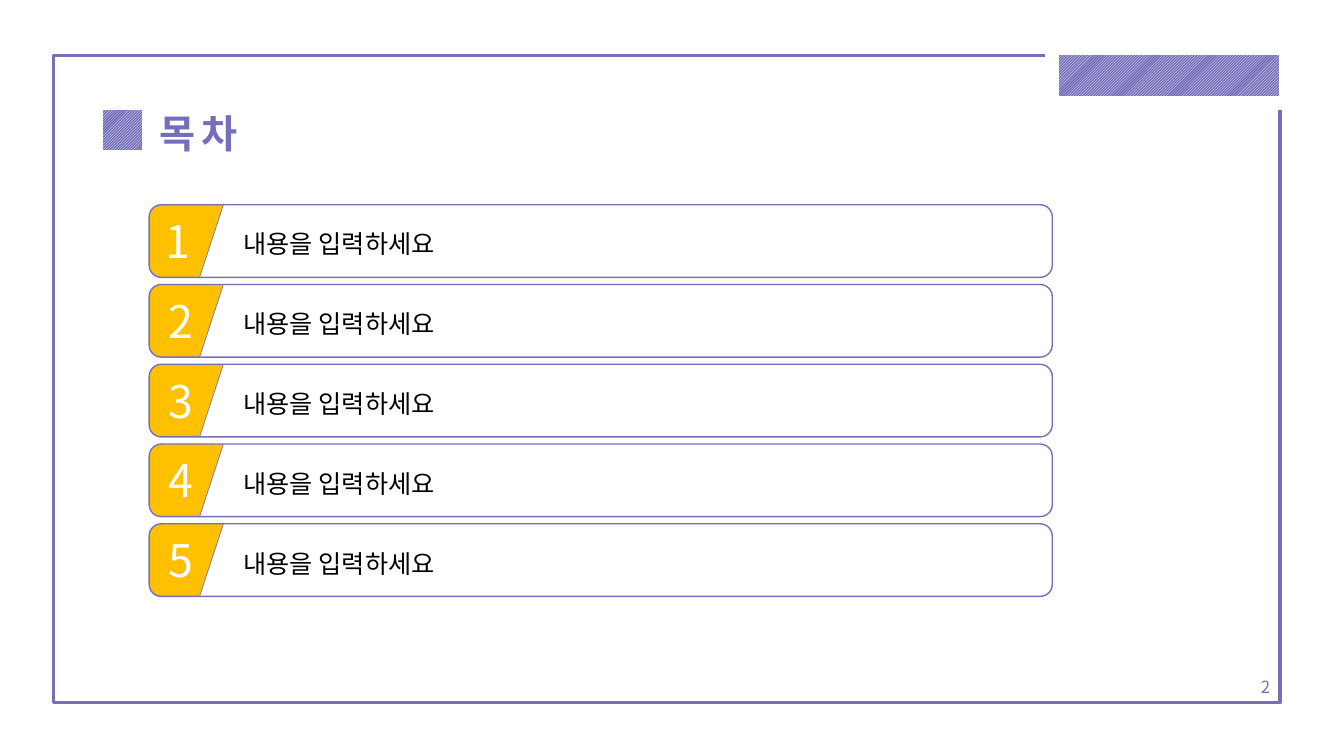
from math import cos, radians, sin

from lxml.etree import SubElement
from pptx import Presentation
from pptx.dml.color import RGBColor
from pptx.enum.dml import MSO_PATTERN
from pptx.enum.shapes import MSO_CONNECTOR, MSO_SHAPE
from pptx.enum.text import MSO_ANCHOR, MSO_AUTO_SIZE as AutoSize, PP_ALIGN
from pptx.oxml.ns import qn
from pptx.util import Cm, Pt

PURPLE = RGBColor(0x75, 0x6F, 0xBB)
AMBER = RGBColor(0xFF, 0xC0, 0x00)
WHITE = RGBColor(0xFF, 0xFF, 0xFF)
BLACK = RGBColor(0x00, 0x00, 0x00)
FONT = "Noto Sans CJK KR"

ENTRIES = ["내용을 입력하세요"] * 5
ROW_LEFT, ROW_TOP, ROW_PITCH = 3.76, 5.16, 2.01
ROW_WIDTH, ROW_HEIGHT = 22.76, 1.83
CORNER = ROW_HEIGHT / 6
TAB_TOP_WIDTH, TAB_BOTTOM_WIDTH = 1.87, 1.27


def add_outline(page, kind, left, top, width, height, weight):
    """Add an unfilled shape with a purple line."""
    shape = page.shapes.add_shape(kind, Cm(left), Cm(top), Cm(width), Cm(height))
    shape.shadow.inherit = False
    shape.fill.background()
    shape.line.color.rgb = PURPLE
    shape.line.width = Pt(weight)
    return shape


def add_hatched_block(page, left, top, width, height):
    """Add a diagonally hatched rectangle with a wide white border."""
    block = add_outline(page, MSO_SHAPE.RECTANGLE, left, top, width, height, 10)
    block.line.color.rgb = WHITE
    block.fill.patterned()
    block.fill.pattern = MSO_PATTERN.DARK_UPWARD_DIAGONAL
    block.fill.fore_color.rgb = WHITE
    block.fill.back_color.rgb = PURPLE


def add_text(page, text, left, top, width, height, size, color,
             wrap=True, bold=False, spacing=None):
    """Add a one-paragraph text box and return it."""
    box = page.shapes.add_textbox(Cm(left), Cm(top), Cm(width), Cm(height))
    frame = box.text_frame
    frame.word_wrap = wrap
    frame.auto_size = AutoSize.SHAPE_TO_FIT_TEXT
    para = frame.paragraphs[0]
    para.text = text
    para.font.size = Pt(size)
    para.font.bold = bold
    para.font.color.rgb = color
    para.font.name = FONT
    defaults = para._p.pPr.find(qn("a:defRPr"))
    SubElement(defaults, qn("a:ea"), typeface=FONT)
    if spacing is not None:
        defaults.set("spc", str(spacing * 100))
    return box


def corner_points(center_x, center_y, start):
    """Return points along a quarter circle that begins at an angle."""
    angles = [radians(start + step) for step in range(0, 91, 10)]
    return [(Cm(center_x + CORNER * cos(angle)), Cm(center_y + CORNER * sin(angle)))
            for angle in angles]


def add_number_tab(page, top):
    """Add the amber tab with a slanted right side and rounded left corners."""
    bottom = top + ROW_HEIGHT
    center_x = ROW_LEFT + CORNER
    points = [(Cm(ROW_LEFT + TAB_BOTTOM_WIDTH), Cm(bottom))]
    points += corner_points(center_x, bottom - CORNER, 90)
    points += corner_points(center_x, top + CORNER, 180)
    builder = page.shapes.build_freeform(Cm(ROW_LEFT + TAB_TOP_WIDTH), Cm(top))
    builder.add_line_segments(points, close=True)
    tab = builder.convert_to_shape()
    tab.shadow.inherit = False
    tab.fill.solid()
    tab.fill.fore_color.rgb = AMBER
    tab.line.fill.background()


def add_slant(page, top):
    """Add the thin line along the slanted side of a tab."""
    slant = page.shapes.add_connector(
        MSO_CONNECTOR.STRAIGHT,
        Cm(ROW_LEFT + TAB_BOTTOM_WIDTH), Cm(top + ROW_HEIGHT),
        Cm(ROW_LEFT + TAB_TOP_WIDTH), Cm(top))
    slant.line.color.rgb = PURPLE
    slant.line.width = Pt(0.5)
    SubElement(slant._element.spPr, qn("a:effectLst"))


def add_entry(page, number, text):
    """Add one numbered row of the contents list."""
    top = ROW_TOP + (number - 1) * ROW_PITCH
    add_number_tab(page, top)
    add_outline(page, MSO_SHAPE.ROUNDED_RECTANGLE,
                ROW_LEFT, top, ROW_WIDTH, ROW_HEIGHT, 1)
    add_slant(page, top)
    number_left = 3.91 if number == 1 else 3.99
    add_text(page, str(number), number_left, top + 0.1, 1.13, 1.62, 32, WHITE, wrap=False)
    add_text(page, text, 5.89, top + 0.48, 19.8, 1.03, 18, BLACK)


def add_page_number(page, text):
    """Add the page number in the lower right corner."""
    box = add_text(page, text, 31.04, 16.79, 1.22, 1.02, 12, PURPLE)
    box.text_frame.auto_size = AutoSize.NONE
    box.text_frame.vertical_anchor = MSO_ANCHOR.MIDDLE
    box.text_frame.paragraphs[0].alignment = PP_ALIGN.RIGHT


def main():
    """Build the contents slide and save it."""
    deck = Presentation()
    deck.slide_width, deck.slide_height = Cm(33.87), Cm(19.05)
    page = deck.slides.add_slide(deck.slide_layouts[6])
    add_outline(page, MSO_SHAPE.RECTANGLE, 1.35, 1.4, 30.91, 16.31, 2.5)
    add_hatched_block(page, 26.52, 1.22, 5.89, 1.37)
    add_text(page, "목 차", 3.76, 2.62, 2.54, 1.45, 28, PURPLE,
             wrap=False, bold=True, spacing=-1)
    add_hatched_block(page, 2.41, 2.59, 1.35, 1.37)
    for number, text in enumerate(ENTRIES, start=1):
        add_entry(page, number, text)
    add_page_number(page, "2")
    deck.save("out.pptx")


if __name__ == "__main__":
    main()
